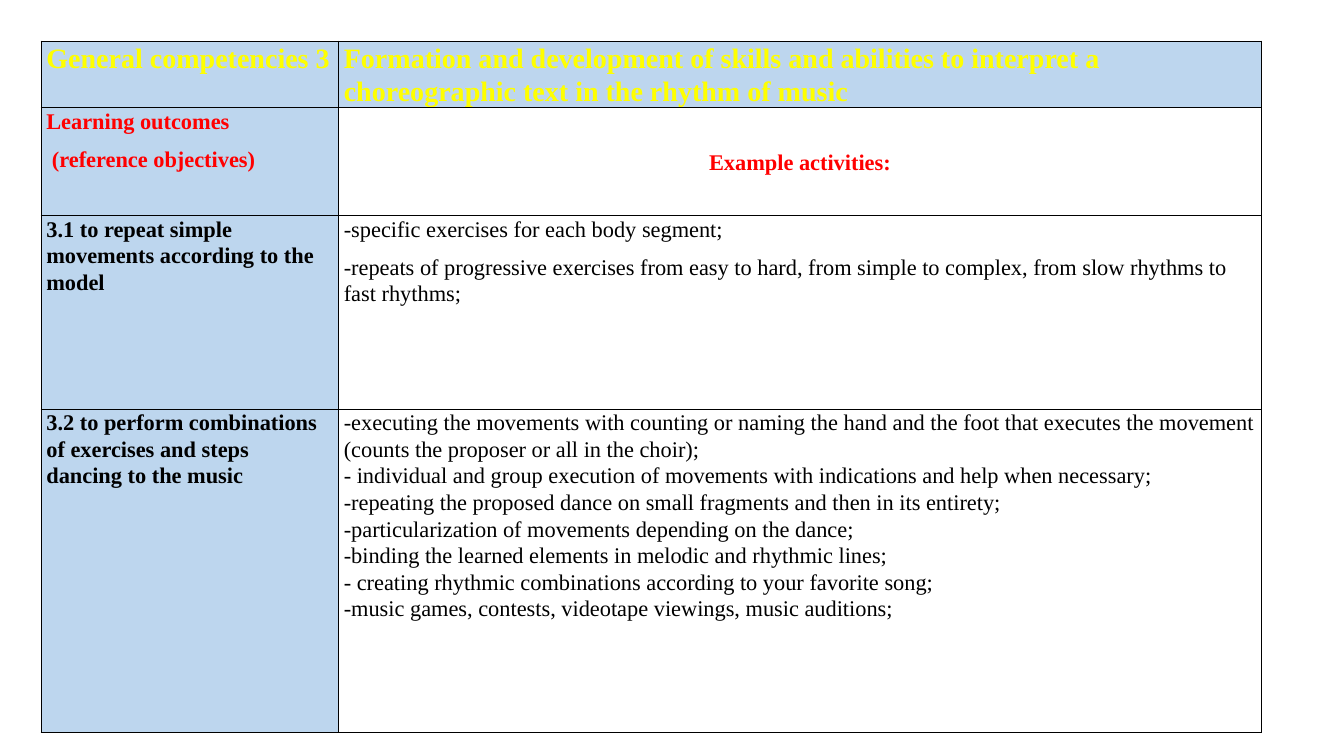
from dataclasses import dataclass

from lxml import etree
from pptx import Presentation
from pptx import util as u
from pptx.dml.color import RGBColor
from pptx.enum import text
from pptx.oxml import ns


@dataclass(frozen=True)
class Theme:
    font: str = "Times New Roman"
    title_size: int = 20
    body_size: int = 16
    title: str = "FFFF00"
    heading: str = "FF0000"
    body: str = "000000"
    border: str = "000000"
    accent: str = "BDD6EE"
    plain: str = "FFFFFF"
    line_spacing: float = 1.07


THEME = Theme()


def write_text(para, words, size=THEME.body_size, color=THEME.body, bold=False,
               align=text.PP_ALIGN.LEFT, space_before=0):
    para.alignment = align
    para.line_spacing = THEME.line_spacing
    para.space_before = u.Pt(space_before)
    span = para.add_run()
    span.text = words
    span.font.name = THEME.font
    span.font.size = u.Pt(size)
    span.font.bold = bold
    span.font.color.rgb = RGBColor.from_string(color)


class PageBuilder:
    def __init__(self, theme, page):
        self.theme = theme
        self.page = page

    def table(self, left, top, widths, heights):
        frame = self.page.shapes.add_table(
            len(heights), len(widths), u.Inches(left), u.Inches(top),
            u.Inches(sum(widths)), u.Inches(sum(heights)))
        table = frame.table
        table.first_row = table.horz_banding = False
        for column, width in zip(table.columns, widths):
            column.width = u.Inches(width)
        for row, height in zip(table.rows, heights):
            row.height = u.Inches(height)
        return table

    def cell(self, cell, lines, fill, gap=0, anchor=text.MSO_ANCHOR.TOP, **style):
        cell.margin_left = cell.margin_right = u.Inches(0.05)
        cell.margin_top = cell.margin_bottom = 0
        cell.vertical_anchor = anchor
        self.borders(cell)
        cell.fill.solid()
        cell.fill.fore_color.rgb = RGBColor.from_string(fill)
        box = cell.text_frame
        for index, words in enumerate(lines):
            para = box.add_paragraph() if index else box.paragraphs[0]
            write_text(para, words, space_before=gap if index else 0, **style)

    def borders(self, cell):
        properties = cell._tc.get_or_add_tcPr()
        for side in ("a:lnL", "a:lnR", "a:lnT", "a:lnB"):
            line = etree.SubElement(properties, ns.qn(side), w=str(u.Pt(1)))
            fill = etree.SubElement(line, ns.qn("a:solidFill"))
            etree.SubElement(fill, ns.qn("a:srgbClr"), val=self.theme.border)


TITLE = dict(size=THEME.title_size, color=THEME.title, bold=True)
HEADING = dict(color=THEME.heading, bold=True, gap=8)
OUTCOME = dict(bold=True)

ROWS = [
    (0.65,
     (["General competencies 3"], dict(TITLE, fill=THEME.accent)),
     (["Formation and development of skills and abilities to interpret a "
       "choreographic text in the rhythm of music"], dict(TITLE, fill=THEME.accent))),
    (1.07,
     (["Learning outcomes", " (reference objectives)"], dict(HEADING, fill=THEME.accent)),
     (["Example activities:"],
      dict(HEADING, fill=THEME.plain, align=text.PP_ALIGN.CENTER,
           anchor=text.MSO_ANCHOR.MIDDLE))),
    (1.92,
     (["3.1 to repeat simple movements according to the model"],
      dict(OUTCOME, fill=THEME.accent)),
     (["-specific exercises for each body segment;",
       "-repeats of progressive exercises from easy to hard, from simple to complex, "
       "from slow rhythms to fast rhythms;"], dict(fill=THEME.plain, gap=8))),
    (3.21,
     (["3.2 to perform combinations of exercises and steps", "dancing to the music"],
      dict(OUTCOME, fill=THEME.accent)),
     (["-executing the movements with counting or naming the hand and the foot that "
       "executes the movement (counts the proposer or all in the choir);",
       "- individual and group execution of movements with indications and help "
       "when necessary;",
       "-repeating the proposed dance on small fragments and then in its entirety;",
       "-particularization of movements depending on the dance;",
       "-binding the learned elements in melodic and rhythmic lines;",
       "- creating rhythmic combinations according to your favorite song;",
       "-music games, contests, videotape viewings, music auditions;"],
      dict(fill=THEME.plain))),
]


def main():
    deck = Presentation()
    deck.slide_width = u.Inches(13.33)
    deck.slide_height = u.Inches(7.5)
    builder = PageBuilder(THEME, deck.slides.add_slide(deck.slide_layouts[6]))
    table = builder.table(0.41, 0.41, [2.95, 9.15], [height for height, *_ in ROWS])
    for row, (_, *contents) in enumerate(ROWS):
        for column, (lines, style) in enumerate(contents):
            builder.cell(table.cell(row, column), lines, **style)
    deck.save("out.pptx")


if __name__ == "__main__":
    main()
